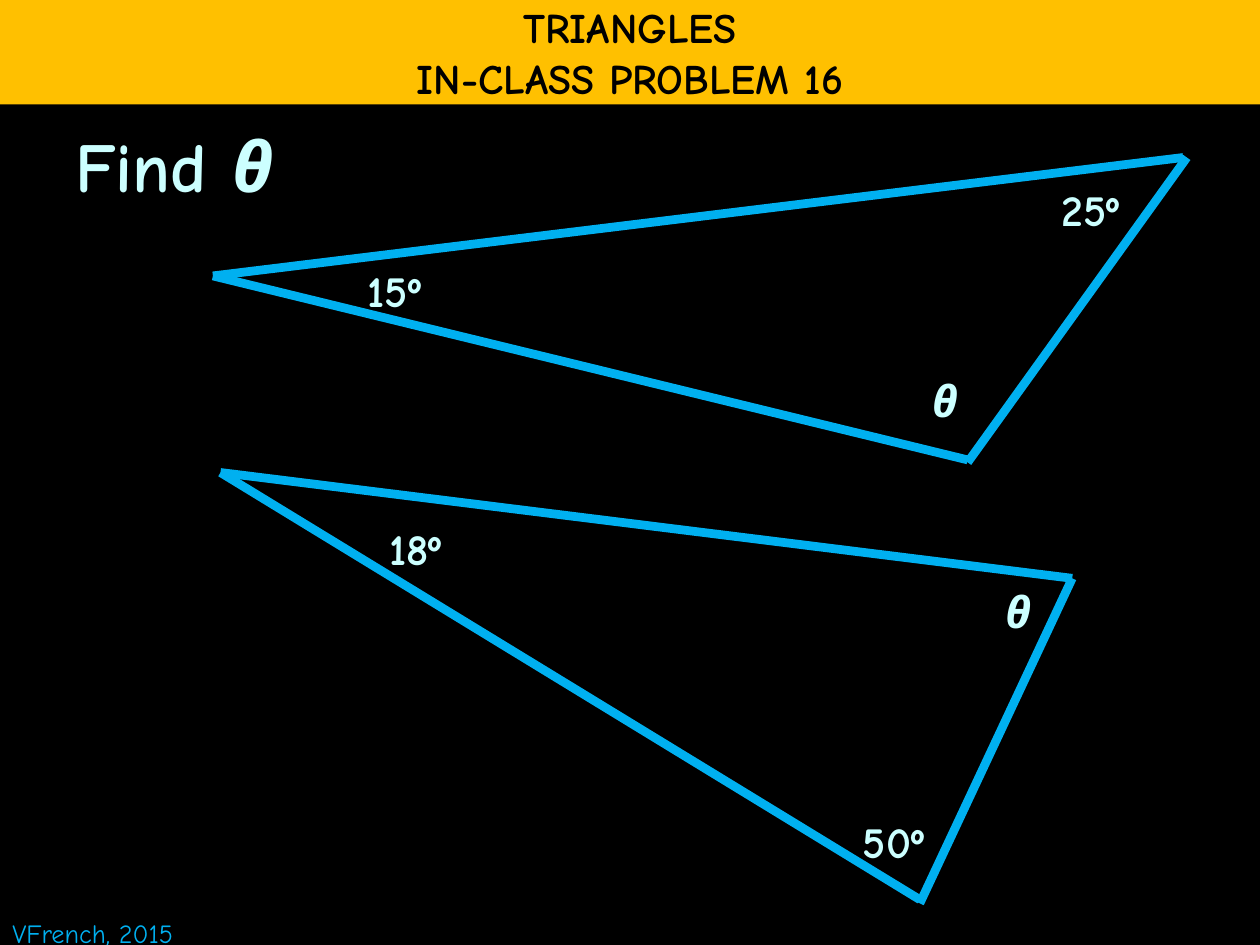
from lxml import etree
from pptx import Presentation
from pptx.dml.color import RGBColor
from pptx.enum.shapes import MSO_CONNECTOR, MSO_SHAPE
from pptx.enum.text import MSO_ANCHOR, PP_ALIGN
from pptx.oxml.ns import qn
from pptx.util import Inches, Pt

FONT = "Comic Neue"
BLACK = RGBColor(0x00, 0x00, 0x00)
GOLD = RGBColor(0xFF, 0xC0, 0x00)
BLUE = RGBColor(0x00, 0xB0, 0xF0)
PALE = RGBColor(0xCC, 0xFF, 0xFF)


def style(r, size, color, bold=True):
    """Format a run, with theta in italics."""
    r.font.name = FONT
    r.font.size = Pt(size)
    r.font.bold = bold
    r.font.italic = r.text == "θ"
    r.font.color.rgb = color


def add_text(shapes, box, parts, size, color, bold=True):
    """Place one line of text made of the given parts."""
    tf = shapes.add_textbox(*map(Inches, box)).text_frame
    tf.word_wrap = True
    for part in parts:
        r = tf.paragraphs[0].add_run()
        r.text = part
        style(r, size, color, bold)


def add_banner(slide, box):
    """Draw the title band."""
    sp = slide.shapes.add_shape(MSO_SHAPE.RECTANGLE, *map(Inches, box))
    sp.shadow.inherit = False
    sp.fill.solid()
    sp.fill.fore_color.rgb = GOLD
    sp.line.fill.background()
    tf = sp.text_frame
    tf.text = "TRIANGLES\nIN-CLASS PROBLEM 16"
    tf.vertical_anchor = MSO_ANCHOR.MIDDLE
    for p in tf.paragraphs:
        p.alignment = PP_ALIGN.CENTER
        style(p.runs[0], 24, BLACK)


def add_triangle(slide, left, top, sides, labels):
    """Group three sides and their angle labels, offset from the corner given."""
    shapes = slide.shapes.add_group_shape().shapes
    for x1, y1, x2, y2 in sides:
        ends = (left + x1, top + y1, left + x2, top + y2)
        side = shapes.add_connector(MSO_CONNECTOR.STRAIGHT, *map(Inches, ends))
        side.line.color.rgb = BLUE
        side.line.width = Pt(5)
        etree.SubElement(side._element.spPr, qn("a:effectLst"))
    for text, x, y in labels:
        width = 0.42 if text == "θ" else 0.84
        add_text(shapes, (left + x, top + y, width, 0.52), [text], 25, PALE)


def main():
    """Build the slide and save it."""
    prs = Presentation()
    prs.slide_width, prs.slide_height = Inches(10), Inches(7.5)
    s = prs.slides.add_slide(prs.slide_layouts[6])
    s.background.fill.solid()
    s.background.fill.fore_color.rgb = BLACK

    add_text(s.shapes, (0.5, 0.92, 9, 6.17), ["Find ", "θ"], 40, PALE)
    add_banner(s, (0, 0, 10, 0.83))
    add_text(s.shapes, (0, 7.23, 1.69, 0.35), ["VFrench, 2015"], 15, BLUE, False)
    add_triangle(
        s, 1.69, 1.25,
        [(5.99, 2.42, 7.73, 0), (5.99, 2.4, 0, 0.94), (0, 0.94, 7.7, 0)],
        [("15º", 1.13, 0.79), ("25º", 6.64, 0.15), ("θ", 5.61, 1.67)],
    )
    add_triangle(
        s, 1.75, 3.75,
        [(5.55, 3.42, 6.76, 0.84), (5.55, 3.39, 0, 0), (0, 0, 6.76, 0.84)],
        [("18º", 1.24, 0.34), ("50º", 5, 2.67), ("θ", 6.13, 0.84)],
    )
    prs.save("out.pptx")


if __name__ == "__main__":
    main()
